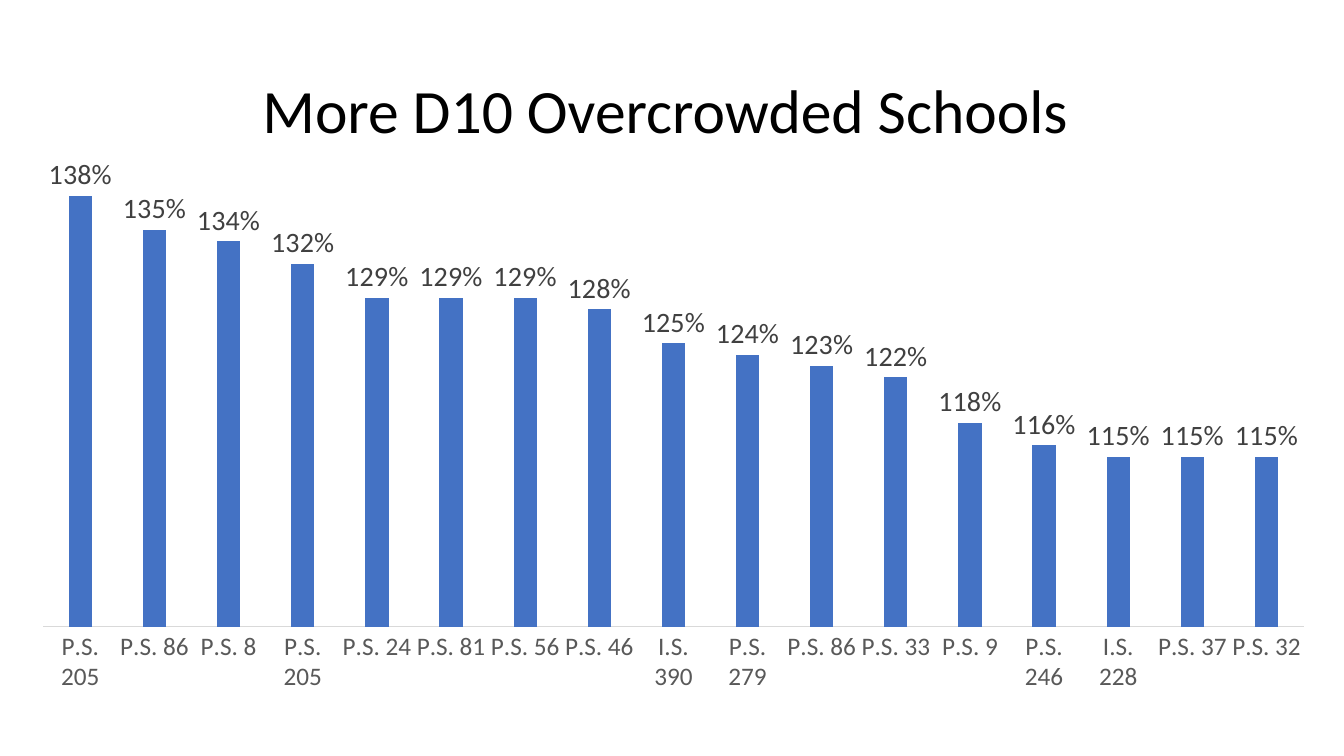
from typing import NamedTuple

from lxml import etree
from pptx import Presentation
from pptx.chart.chart import Chart
from pptx.chart.data import CategoryChartData
from pptx.dml.color import RGBColor
from pptx.enum.chart import XL_CHART_TYPE as ChartType
from pptx.enum.chart import XL_LABEL_POSITION as LabelPos
from pptx.enum.chart import XL_TICK_MARK as TickMark
from pptx.enum.text import MSO_ANCHOR, PP_ALIGN
from pptx.oxml.ns import qn
from pptx.slide import Slide
from pptx.text.text import Font
from pptx.util import Inches, Pt

FONT = "Calibri"
BLACK = RGBColor(0x00, 0x00, 0x00)
BLUE = RGBColor(0x44, 0x72, 0xC4)
LABEL_GRAY = RGBColor(0x40, 0x40, 0x40)
AXIS_GRAY = RGBColor(0x59, 0x59, 0x59)
LINE_GRAY = RGBColor(0xD9, 0xD9, 0xD9)


class School(NamedTuple):
    name: str
    utilization: float


class Box(NamedTuple):
    """Left, top, width and height in inches."""
    x: float
    y: float
    w: float
    h: float


SCHOOLS = [
    School("P.S. 205", 1.38),
    School("P.S. 86", 1.35),
    School("P.S. 8", 1.34),
    School("P.S. 205", 1.32),
    School("P.S. 24", 1.29),
    School("P.S. 81", 1.29),
    School("P.S. 56", 1.29),
    School("P.S. 46", 1.28),
    School("I.S. 390", 1.25),
    School("P.S. 279", 1.24),
    School("P.S. 86", 1.23),
    School("P.S. 33", 1.22),
    School("P.S. 9", 1.18),
    School("P.S. 246", 1.16),
    School("I.S. 228", 1.15),
    School("P.S. 37", 1.15),
    School("P.S. 32", 1.15),
]
TITLE_BOX = Box(0.92, 0.4, 11.5, 1.45)
CHART_BOX = Box(0.25, 1.56, 12.81, 5.54)
PLOT_BOX = Box(0.18, 0.16, 12.5, 4.5)  # relative to the chart


def set_font(font: Font, size: float, color: RGBColor) -> None:
    font.name = FONT
    font.size = Pt(size)
    font.color.rgb = color


def add_title(s: Slide, text: str) -> None:
    sp = s.shapes.add_textbox(*map(Inches, TITLE_BOX))
    tf = sp.text_frame
    tf.word_wrap = True
    tf.vertical_anchor = MSO_ANCHOR.MIDDLE
    p = tf.paragraphs[0]
    p.text = text
    p.alignment = PP_ALIGN.CENTER
    p.line_spacing = 0.9
    set_font(p.font, 44, BLACK)


def place_plot(chart: Chart) -> None:
    """Fix the inner plot area at PLOT_BOX."""
    area = chart.element.find(".//" + qn("c:plotArea"))
    for old in area.findall(qn("c:layout")):
        area.remove(old)
    layout = etree.Element(qn("c:layout"))
    manual = etree.SubElement(layout, qn("c:manualLayout"))
    settings = {
        "layoutTarget": "inner",
        "xMode": "edge",
        "yMode": "edge",
        "x": PLOT_BOX.x / CHART_BOX.w,
        "y": PLOT_BOX.y / CHART_BOX.h,
        "w": PLOT_BOX.w / CHART_BOX.w,
        "h": PLOT_BOX.h / CHART_BOX.h,
    }
    for tag, value in settings.items():
        etree.SubElement(manual, qn(f"c:{tag}"), val=str(value))
    area.insert(0, layout)


def add_school_chart(s: Slide) -> None:
    data = CategoryChartData(number_format="0%")
    data.categories = [school.name for school in SCHOOLS]
    data.add_series("Series 1", [school.utilization for school in SCHOOLS])
    chart = s.shapes.add_chart(
        ChartType.COLUMN_CLUSTERED, *map(Inches, CHART_BOX), data
    ).chart
    chart.has_legend = False
    chart.has_title = False
    set_font(chart.font, 10, BLACK)
    place_plot(chart)

    cat_axis = chart.category_axis
    cat_axis.major_tick_mark = TickMark.NONE
    cat_axis.minor_tick_mark = TickMark.NONE
    set_font(cat_axis.tick_labels.font, 18, AXIS_GRAY)
    cat_axis.format.line.color.rgb = LINE_GRAY
    cat_axis.format.line.width = Pt(0.75)

    val_axis = chart.value_axis
    val_axis.minimum_scale = 1.0
    val_axis.maximum_scale = 1.4
    val_axis.has_major_gridlines = False
    val_axis.visible = False

    plot = chart.plots[0]
    plot.gap_width = 219
    plot.overlap = -27
    plot.vary_by_categories = False
    series = plot.series[0]
    series.format.fill.solid()
    series.format.fill.fore_color.rgb = BLUE

    labels = series.data_labels
    labels.show_value = True
    labels.position = LabelPos.OUTSIDE_END
    labels.number_format = "0%"
    labels.number_format_is_linked = False
    set_font(labels.font, 20, LABEL_GRAY)


def main() -> None:
    prs = Presentation()
    prs.slide_width = Inches(13.33)
    prs.slide_height = Inches(7.5)
    s = prs.slides.add_slide(prs.slide_layouts[6])
    add_title(s, "More D10 Overcrowded Schools ")
    add_school_chart(s)
    prs.save("out.pptx")


if __name__ == "__main__":
    main()
